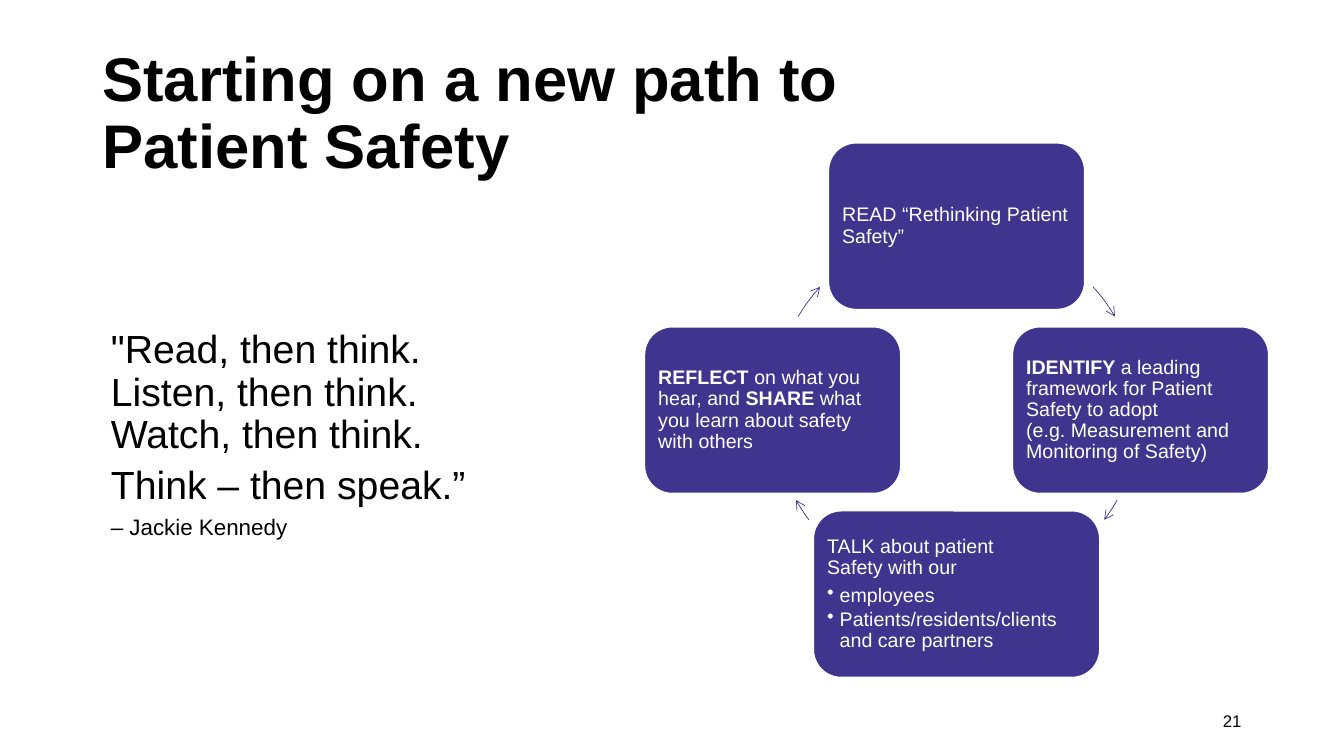
import pptx
import pptx.util
import pptx.dml.color
import pptx.enum.shapes
import pptx.enum.text
import pptx.oxml
import pptx.oxml.ns

Pt = pptx.util.Pt
SHAPE = pptx.enum.shapes.MSO_SHAPE
ANCHOR = pptx.enum.text.MSO_ANCHOR
ALIGN = pptx.enum.text.PP_ALIGN

# Content: a paragraph is (runs, format); a run is (text, bold)
COLOURS = {"box": "3F358F", "light": "FFFFFF", "text": "000000"}
TITLE = [([("Starting on a new path to \nPatient Safety", True)], {"size": 44})]
QUOTE = [
    ([('"Read, then think. \nListen, then think. \nWatch, then think.', False)], {"size": 28, "after": 6}),
    ([("Think – then speak.”", False)], {"size": 28, "after": 6}),
    ([("– Jackie Kennedy", False)], {"size": 16, "after": 6}),
]
NUMBER = [([("21", False)], {"size": 12, "after": 6, "spacing": 1.0, "align": ALIGN.RIGHT})]
STEP = {"size": 14, "after": 5, "colour": "light"}
POINT = {"size": 14, "after": 2, "colour": "light", "bullet": "•"}
# Steps: direction from the centre of the cycle, box width, paragraphs
STEPS = [
    ((0, -1), 183, [([("READ “Rethinking Patient Safety”", False)], STEP)]),
    ((1, 0), 183, [([("IDENTIFY ", True),
                     ("a leading framework for Patient Safety to adopt \n"
                      "(e.g. Measurement and Monitoring of Safety)", False)], STEP)]),
    ((0, 1), 204.5, [([("TALK about patient \nSafety with our", False)], STEP),
                     ([("employees", False)], POINT),
                     ([("Patients/residents/clients and care partners", False)], POINT)]),
    ((-1, 0), 183, [([("REFLECT ", True), ("on what you hear, and ", False),
                      ("SHARE ", True), ("what you learn about safety with others", False)], STEP)]),
]
ARROWS = [(317.9, 329.4), (29.2, 36.6), (143.4, 150.8), (210.6, 222.1)]  # degrees, clockwise
CENTRE_X, CENTRE_Y, RADIUS, BOX_HEIGHT = 683.3, 293, 131.4, 119


def colour(name):
    return pptx.dml.color.RGBColor.from_string(COLOURS[name])


def set_attributes(target, values):
    for name, value in values.items():
        setattr(target, name, value)


def place(shape, left, top, width, height):
    set_attributes(shape, {"left": Pt(left), "top": Pt(top), "width": Pt(width), "height": Pt(height)})


def set_bullet(paragraph, character):
    properties = paragraph._p.get_or_add_pPr()
    indent = Pt(9) if character else 0
    properties.set("marL", str(indent))
    properties.set("indent", str(-indent))
    bullet = pptx.oxml.ns.qn("a:buChar" if character else "a:buNone")
    element = properties.makeelement(bullet, {"char": character} if character else {})
    properties.append(element)


def write(shape, paragraphs, anchor, inset_x=7.2, inset_y=3.6):
    frame = shape.text_frame
    set_attributes(frame, {
        "word_wrap": True, "auto_size": pptx.enum.text.MSO_AUTO_SIZE.NONE, "vertical_anchor": anchor,
        "margin_left": Pt(inset_x), "margin_right": Pt(inset_x),
        "margin_top": Pt(inset_y), "margin_bottom": Pt(inset_y)})
    for index, (runs, style) in enumerate(paragraphs):
        paragraph = frame.add_paragraph() if index else frame.paragraphs[0]
        set_attributes(paragraph, {
            "alignment": style.get("align", ALIGN.LEFT), "line_spacing": style.get("spacing", 0.9),
            "space_before": Pt(0), "space_after": Pt(style.get("after", 0))})
        set_bullet(paragraph, style.get("bullet"))
        for text, bold in runs:
            for line_index, line in enumerate(text.split("\n")):
                if line_index:
                    paragraph.add_line_break()
                run = paragraph.add_run()
                run.text = line
                set_attributes(run.font, {"name": "Arial", "size": Pt(style["size"]), "bold": bold})
                run.font.color.rgb = colour(style.get("colour", "text"))


def add_step(slide, direction, width, paragraphs):
    left = CENTRE_X + direction[0] * RADIUS - width / 2
    top = CENTRE_Y + direction[1] * RADIUS - BOX_HEIGHT / 2
    box = slide.shapes.add_shape(SHAPE.ROUNDED_RECTANGLE, Pt(left), Pt(top), Pt(width), Pt(BOX_HEIGHT))
    box.shadow.inherit = False
    box.fill.solid()
    box.fill.fore_color.rgb = colour("box")
    box.line.color.rgb = colour("light")
    box.line.width = Pt(1)
    write(box, paragraphs, ANCHOR.MIDDLE, 4, 4)


def add_arrow(slide, start, end):
    arc = slide.shapes.add_shape(SHAPE.ARC, Pt(CENTRE_X - RADIUS), Pt(CENTRE_Y - RADIUS),
                                 Pt(2 * RADIUS), Pt(2 * RADIUS))
    arc.shadow.inherit = False
    arc.fill.background()
    # Angles are stored in 60000ths of a degree, adjustments in 100000ths
    for index, angle in enumerate((start, end)):
        arc.adjustments[index] = angle * 0.6
    arc.line.color.rgb = colour("box")
    arc.line.width = Pt(0.5)
    line = arc.line._get_or_add_ln()
    line.append(line.makeelement(pptx.oxml.ns.qn("a:tailEnd"), {"type": "arrow"}))


def main():
    presentation = pptx.Presentation()
    set_attributes(presentation, {"slide_width": Pt(960), "slide_height": Pt(540)})
    slide = presentation.slides.add_slide(presentation.slide_layouts[1])

    # Title and quotation
    title, quote = slide.shapes.title, slide.placeholders[1]
    place(title, 66, 28.8, 828, 104.4)
    write(title, TITLE, ANCHOR.BOTTOM)
    place(quote, 72, 232, 408, 342.5)
    write(quote, QUOTE, ANCHOR.TOP)

    # Cycle of steps
    for step, arrow in zip(STEPS, ARROWS):
        add_step(slide, *step)
        add_arrow(slide, *arrow)

    # Slide number
    number = slide.shapes.add_textbox(Pt(678), Pt(500.5), Pt(216), Pt(28.8))
    write(number, NUMBER, ANCHOR.MIDDLE)
    presentation.save("out.pptx")


if __name__ == "__main__":
    main()
